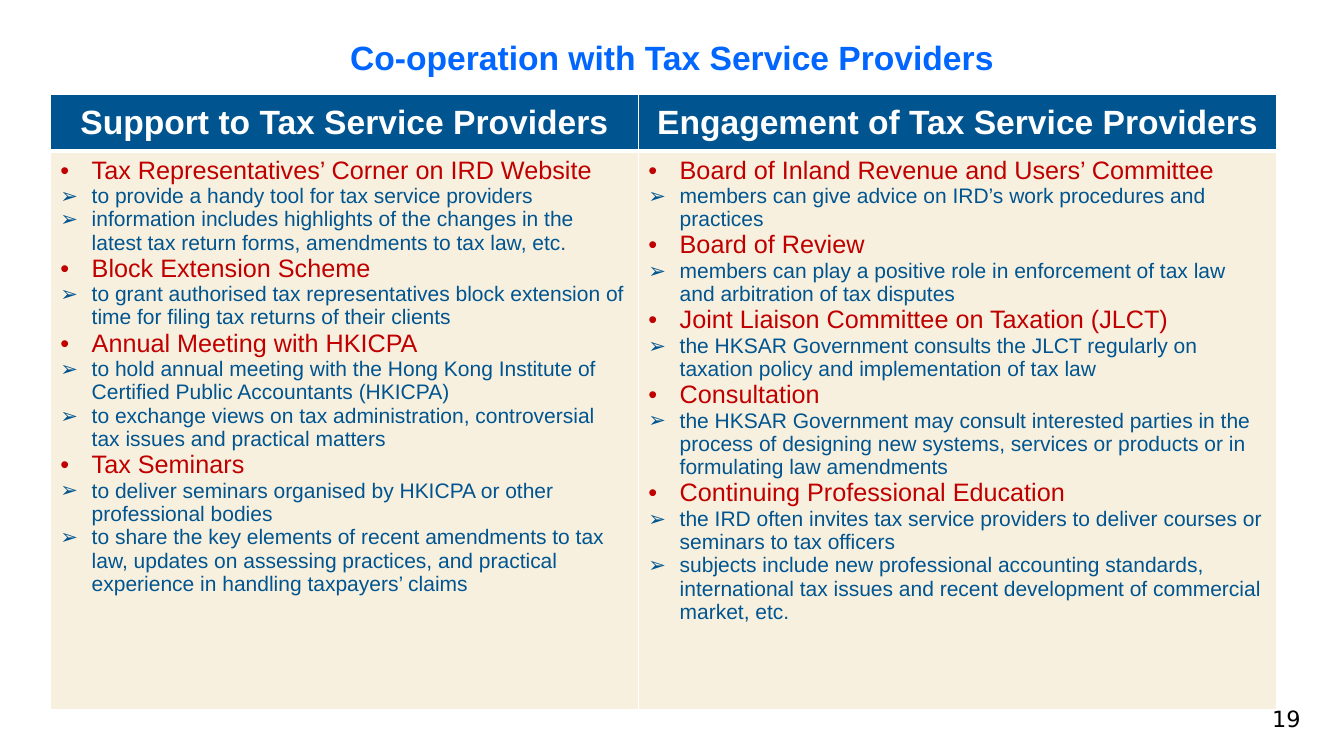
from dataclasses import dataclass

from lxml.etree import SubElement
from pptx import Presentation
from pptx.dml.color import RGBColor as Rgb
from pptx.enum.text import MSO_ANCHOR as Anchor, PP_ALIGN as Align
from pptx.oxml.ns import qn
from pptx.util import Inches, Pt


@dataclass(frozen=True)
class Theme:
    sans: str = "Arial"
    number_face: str = "DejaVu Sans"
    title: str = "0066FF"
    navy: str = "005490"
    red: str = "C00000"
    cream: str = "F7F0DE"
    white: str = "FFFFFF"
    black: str = "000000"
    heading_size: int = 24
    topic_size: int = 18
    detail_size: int = 15
    number_size: int = 16
    thin: int = 1
    thick: int = 3


COLUMNS, ROWS = 80, 45
WIDTH, HEIGHT = 13.33, 7.5
INDENT = 0.31

SUPPORT = [
    ("Tax Representatives’ Corner on IRD Website", [
        "to provide a handy tool for tax service providers",
        "information includes highlights of the changes in the latest tax return forms, "
        "amendments to tax law, etc."]),
    ("Block Extension Scheme", [
        "to grant authorised tax representatives block extension of time for filing tax "
        "returns of their clients"]),
    ("Annual Meeting with HKICPA", [
        "to hold annual meeting with the Hong Kong Institute of Certified Public "
        "Accountants (HKICPA)",
        "to exchange views on tax administration, controversial tax issues and practical "
        "matters"]),
    ("Tax Seminars", [
        "to deliver seminars organised by HKICPA or other professional bodies",
        "to share the key elements of recent amendments to tax law, updates on assessing "
        "practices, and practical experience in handling taxpayers’ claims"]),
]
ENGAGEMENT = [
    ("Board of Inland Revenue and Users’ Committee", [
        "members can give advice on IRD’s work procedures and practices"]),
    ("Board of Review", [
        "members can play a positive role in enforcement of tax law and arbitration of "
        "tax disputes"]),
    ("Joint Liaison Committee on Taxation (JLCT)", [
        "the HKSAR Government consults the JLCT regularly on taxation policy and "
        "implementation of tax law"]),
    ("Consultation", [
        "the HKSAR Government may consult interested parties in the process of designing "
        "new systems, services or products or in formulating law amendments"]),
    ("Continuing Professional Education", [
        "the IRD often invites tax service providers to deliver courses or seminars to "
        "tax officers",
        "subjects include new professional accounting standards, international tax issues "
        "and recent development of commercial market, etc."]),
]


class SlideBuilder:
    def __init__(self, deck, theme):
        self.theme = theme
        self.slide = deck.slides.add_slide(deck.slide_layouts[6])

    def across(self, columns):
        return Inches(columns * WIDTH / COLUMNS)

    def down(self, rows):
        return Inches(rows * HEIGHT / ROWS)

    def area(self, left, top, width, height):
        return self.across(left), self.down(top), self.across(width), self.down(height)

    def wording(self, paragraph, words, color, size, face=None, bold=False):
        paragraph.add_run().text = words
        style = {"name": face or self.theme.sans, "size": Pt(size), "bold": bold}
        for font in (paragraph.font, paragraph.runs[0].font):
            for attribute, value in style.items():
                setattr(font, attribute, value)
            font.color.rgb = Rgb.from_string(color)

    def label(self, place, words, align, anchor, **style):
        frame = self.slide.shapes.add_textbox(*self.area(*place)).text_frame
        for attribute, value in {"word_wrap": True, "vertical_anchor": anchor}.items():
            setattr(frame, attribute, value)
        frame.paragraphs[0].alignment = align
        self.wording(frame.paragraphs[0], words, **style)

    def bullet(self, paragraph, mark):
        properties = paragraph._p.get_or_add_pPr()
        properties.set("marL", str(Inches(INDENT)))
        properties.set("indent", str(-Inches(INDENT)))
        SubElement(properties, qn("a:buFont")).set("typeface", self.theme.sans)
        SubElement(properties, qn("a:buChar")).set("char", mark)

    def finish_cell(self, cell, fill, top, bottom):
        properties = cell._tc.get_or_add_tcPr()
        edges = {"lnL": self.theme.thin, "lnR": self.theme.thin, "lnT": top, "lnB": bottom}
        for edge, weight in edges.items():
            line = SubElement(properties, qn(f"a:{edge}"), w=str(Pt(weight)))
            paint = SubElement(line, qn("a:solidFill"))
            SubElement(paint, qn("a:srgbClr"), val=self.theme.white)
        cell.fill.solid()
        cell.fill.fore_color.rgb = Rgb.from_string(fill)

    def header_cell(self, cell, heading):
        theme = self.theme
        self.finish_cell(cell, theme.navy, theme.thin, theme.thick)
        cell.vertical_anchor = Anchor.MIDDLE
        paragraph = cell.text_frame.paragraphs[0]
        paragraph.alignment = Align.CENTER
        self.wording(paragraph, heading, theme.white, theme.heading_size, bold=True)

    def topic_cell(self, cell, topics):
        theme = self.theme
        self.finish_cell(cell, theme.cream, theme.thick, theme.thin)
        entries = []
        for topic, details in topics:
            entries.append(("•", topic, theme.red, theme.topic_size))
            entries += [("➢", detail, theme.navy, theme.detail_size) for detail in details]
        frame = cell.text_frame
        for index, (mark, words, color, size) in enumerate(entries):
            paragraph = frame.add_paragraph() if index else frame.paragraphs[0]
            self.bullet(paragraph, mark)
            self.wording(paragraph, words, color, size)

    def topic_table(self, left, top, widths, heights, content):
        place = self.area(left, top, sum(widths), sum(heights))
        table = self.slide.shapes.add_table(len(heights), len(widths), *place).table
        for attribute, value in {"first_row": True, "horz_banding": False}.items():
            setattr(table, attribute, value)
        for row, height in zip(table.rows, heights):
            row.height = self.down(height)
        for index, (heading, topics) in enumerate(content):
            table.columns[index].width = self.across(widths[index])
            self.header_cell(table.cell(0, index), heading)
            self.topic_cell(table.cell(1, index), topics)


def main():
    deck = Presentation()
    for attribute, value in {"slide_width": WIDTH, "slide_height": HEIGHT}.items():
        setattr(deck, attribute, Inches(value))
    theme = Theme()
    page = SlideBuilder(deck, theme)
    page.label((4, 1.8, 72, 3.2), "Co-operation with Tax Service Providers",
               Align.CENTER, Anchor.MIDDLE,
               color=theme.title, size=theme.heading_size, bold=True)
    page.topic_table(3, 5.64, (35, 38), (3.36, 33.24), [
        ("Support to Tax Service Providers", SUPPORT),
        ("Engagement of Tax Service Providers", ENGAGEMENT)])
    page.label((59.4, 41.7, 18.6, 2.4), "19", Align.RIGHT, Anchor.TOP,
               color=theme.black, size=theme.number_size, face=theme.number_face)
    deck.save("out.pptx")


if __name__ == "__main__":
    main()
